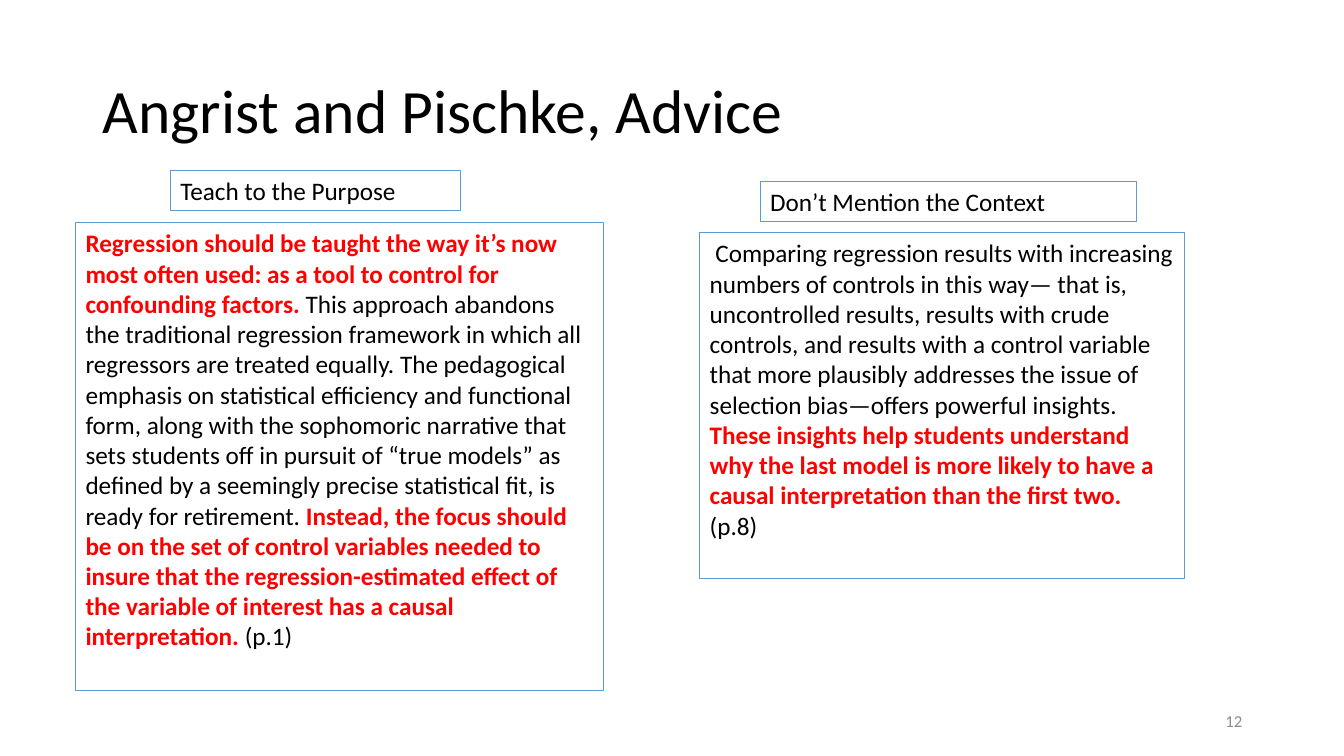
from pptx import Presentation
from pptx.dml.color import RGBColor
from pptx.enum.text import MSO_ANCHOR, MSO_AUTO_SIZE, PP_ALIGN
from pptx.util import Inches, Pt

LEFT, RIGHT = PP_ALIGN.LEFT, PP_ALIGN.RIGHT
MIDDLE = MSO_ANCHOR.MIDDLE
NO_FIT = MSO_AUTO_SIZE.NONE
FONT = "Calibri"
COLORS = {"text": "000000", "key": "FF0000", "border": "5B9BD5", "number": "8C8C8C"}


def format_run(r, size, color, bold=False):
    r.font.name = FONT
    r.font.size = Pt(size)
    r.font.bold = bold
    r.font.color.rgb = RGBColor.from_string(COLORS[color])


prs = Presentation()
prs.slide_width = Inches(13.33)
prs.slide_height = Inches(7.5)
s = prs.slides.add_slide(prs.slide_layouts[5])

# Title
title = s.shapes.title
title.left, title.top = Inches(0.92), Inches(0.4)
title.width, title.height = Inches(11.5), Inches(1.45)
tf = title.text_frame
tf.text = "Angrist and Pischke, Advice"
tf.auto_size = NO_FIT
tf.vertical_anchor = MIDDLE
p = tf.paragraphs[0]
p.alignment = LEFT
p.line_spacing = 0.9
format_run(p.runs[0], 44, "text")

# Bordered quotes and their headings: position, then (text, is key message)
boxes = [
    ((0.75, 2.21, 5.24, 4.64), [
        ("Regression should be taught the way it’s now most often used: as a tool to "
         "control for confounding factors. ", True),
        ("This approach abandons the traditional regression framework in which all "
         "regressors are treated equally. The pedagogical emphasis on statistical "
         "efficiency and functional form, along with the sophomoric narrative that sets "
         "students off in pursuit of “true models” as defined by a seemingly precise "
         "statistical fit, is ready for retirement.", False),
        (" Instead, the focus should be on the set of control variables needed to insure "
         "that the regression-estimated effect of the variable of interest has a causal "
         "interpretation. ", True),
        ("(p.1)", False),
    ]),
    ((6.94, 2.31, 4.81, 3.43), [
        (" Comparing regression results with increasing numbers of controls in this way— "
         "that is, uncontrolled results, results with crude controls, and results with a "
         "control variable that more plausibly addresses the issue of selection "
         "bias—offers powerful insights. ", False),
        ("These insights help students understand why the last model is more likely to "
         "have a causal interpretation than the first two. ", True),
        ("(p.8)", False),
    ]),
    ((1.69, 1.69, 2.88, 0.4), [("Teach to the Purpose", False)]),
    ((7.54, 1.8, 3.73, 0.4), [("Don’t Mention the Context", False)]),
]
for place, parts in boxes:
    sp = s.shapes.add_textbox(*map(Inches, place))
    sp.line.color.rgb = RGBColor.from_string(COLORS["border"])
    sp.line.width = Pt(0.75)
    tf = sp.text_frame
    tf.word_wrap = True
    tf.auto_size = NO_FIT
    for text, is_key in parts:
        r = tf.paragraphs[0].add_run()
        r.text = text
        format_run(r, 18, "key" if is_key else "text", is_key)

# Slide number
number = s.shapes.add_textbox(Inches(9.42), Inches(6.95), Inches(3), Inches(0.4))
tf = number.text_frame
tf.text = "12"
tf.word_wrap = True
tf.vertical_anchor = MIDDLE
p = tf.paragraphs[0]
p.alignment = RIGHT
format_run(p.runs[0], 12, "number")

prs.save("out.pptx")
